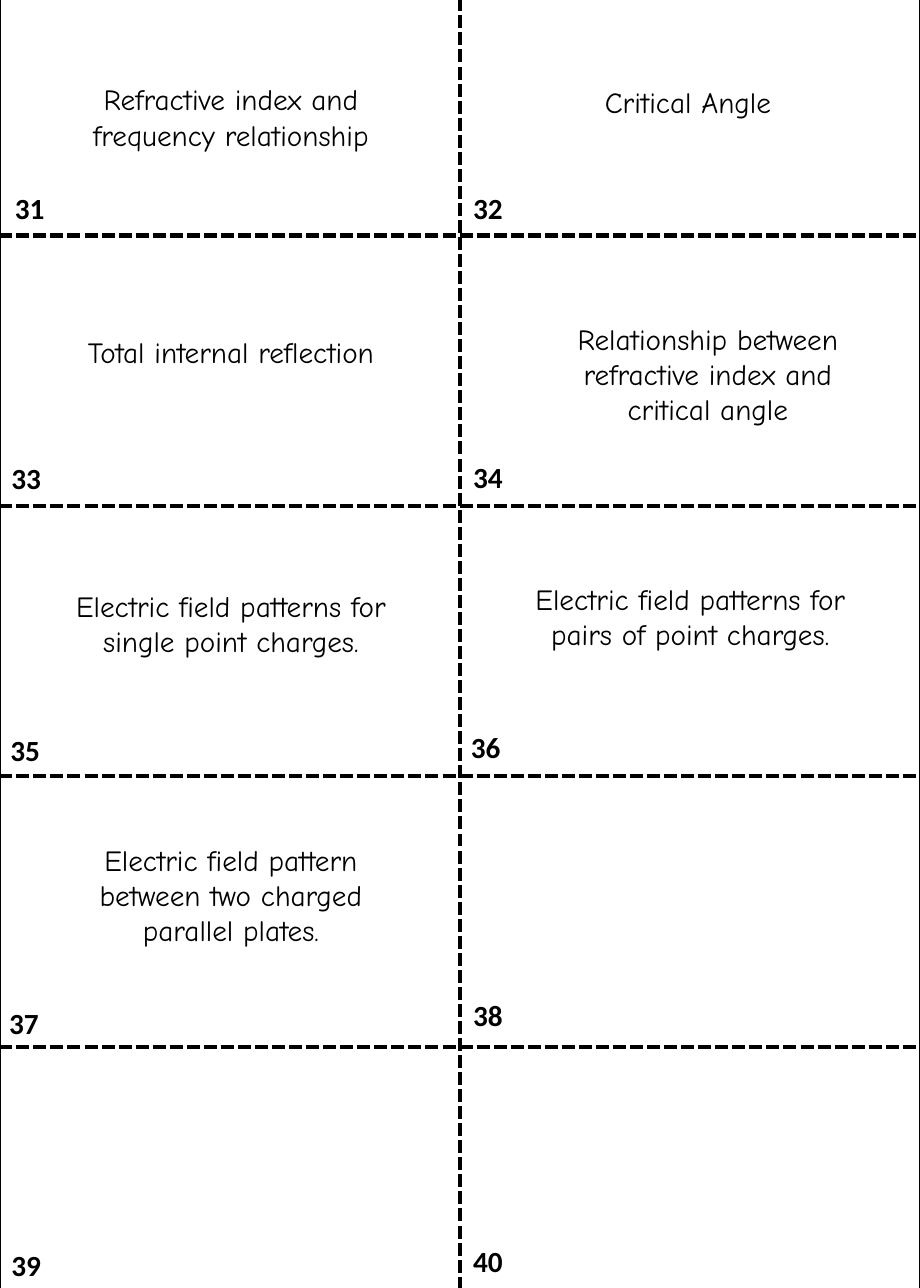
from lxml import etree
from pptx import Presentation
from pptx.dml.color import RGBColor
from pptx.enum.text import MSO_AUTO_SIZE, PP_ALIGN
from pptx.oxml.ns import qn
from pptx.util import Inches, Pt

BLACK = RGBColor(0x00, 0x00, 0x00)
LEFT, CENTER = PP_ALIGN.LEFT, PP_ALIGN.CENTER
GROW = MSO_AUTO_SIZE.SHAPE_TO_FIT_TEXT

ROWS, COLS = 5, 2
FIRST_NUMBER = 31
NUMBER_SPOTS = [
    (0.03, 1.58), (3.95, 1.58),
    (0, 3.89), (3.95, 3.88),
    (-0.01, 6.22), (3.93, 6.19),
    (-0.02, 8.55), (3.95, 8.48),
    (0, 10.62), (3.95, 10.59),
]
TOPICS = [
    ("Refractive index and frequency relationship", 0.55, 0.65, 0.71),
    ("Critical Angle", 4.46, 0.67, 0.71),
    ("Total internal reflection", 0.55, 2.81, 1.01),
    ("Relationship between refractive index and critical angle", 4.63, 2.7, 1.31),
    ("Electric field patterns for single point charges.", 0.55, 4.98, 1.01),
    ("Electric field patterns for pairs of point charges.", 4.48, 4.92, 1.01),
    ("Electric field pattern between two charged parallel plates.", 0.55, 7.16, 1.01),
]


class CardSheet:
    topic_font = "Comic Neue"
    number_font = "Calibri"
    size = Pt(18)
    edge = (Pt(1), "solid")
    cut = (Pt(3), "dash")

    def __init__(self, slide):
        self.slide = slide

    def text(self, text, x, y, w, h, font, bold, align):
        sp = self.slide.shapes.add_textbox(Inches(x), Inches(y), Inches(w), Inches(h))
        tf = sp.text_frame
        tf.word_wrap = True
        tf.auto_size = GROW
        tf.text = text
        p = tf.paragraphs[0]
        p.alignment = align
        r = p.runs[0]
        r.font.name = font
        r.font.size = self.size
        r.font.bold = bold
        r.font.color.rgb = BLACK

    def topic(self, text, x, y, h):
        self.text(text, x, y, 2.85, h, self.topic_font, False, CENTER)

    def number(self, number, x, y):
        self.text(str(number), x, y, 0.53, 0.4, self.number_font, True, LEFT)

    def borders(self, cell, outer):
        tc_pr = cell._tc.get_or_add_tcPr()
        for i, (side, is_outer) in enumerate(outer.items()):
            width, dash = self.edge if is_outer else self.cut
            ln = etree.Element(qn("a:" + side), w=str(width))
            fill = etree.SubElement(ln, qn("a:solidFill"))
            etree.SubElement(fill, qn("a:srgbClr"), val=str(BLACK))
            etree.SubElement(ln, qn("a:prstDash"), val=dash)
            tc_pr.insert(i, ln)

    def grid(self, x, y, col_width, row_height):
        frame = self.slide.shapes.add_table(
            ROWS, COLS, Inches(x), Inches(y),
            Inches(col_width * COLS), Inches(row_height * ROWS))
        table = frame.table
        table.first_row = False
        table.horz_banding = False
        for column in table.columns:
            column.width = Inches(col_width)
        for i, row in enumerate(table.rows):
            row.height = Inches(row_height)
            for j, cell in enumerate(row.cells):
                cell.fill.background()
                self.borders(cell, {
                    "lnL": j == 0, "lnR": j == COLS - 1,
                    "lnT": i == 0, "lnB": i == ROWS - 1})


def main():
    prs = Presentation()
    prs.slide_width = Inches(7.87)
    prs.slide_height = Inches(11.02)
    sheet = CardSheet(prs.slides.add_slide(prs.slide_layouts[6]))
    sheet.grid(0, -0.3, 3.935, 2.314)
    for topic in TOPICS:
        sheet.topic(*topic)
    for number, (x, y) in enumerate(NUMBER_SPOTS, FIRST_NUMBER):
        sheet.number(number, x, y)
    prs.save("out.pptx")


if __name__ == "__main__":
    main()
